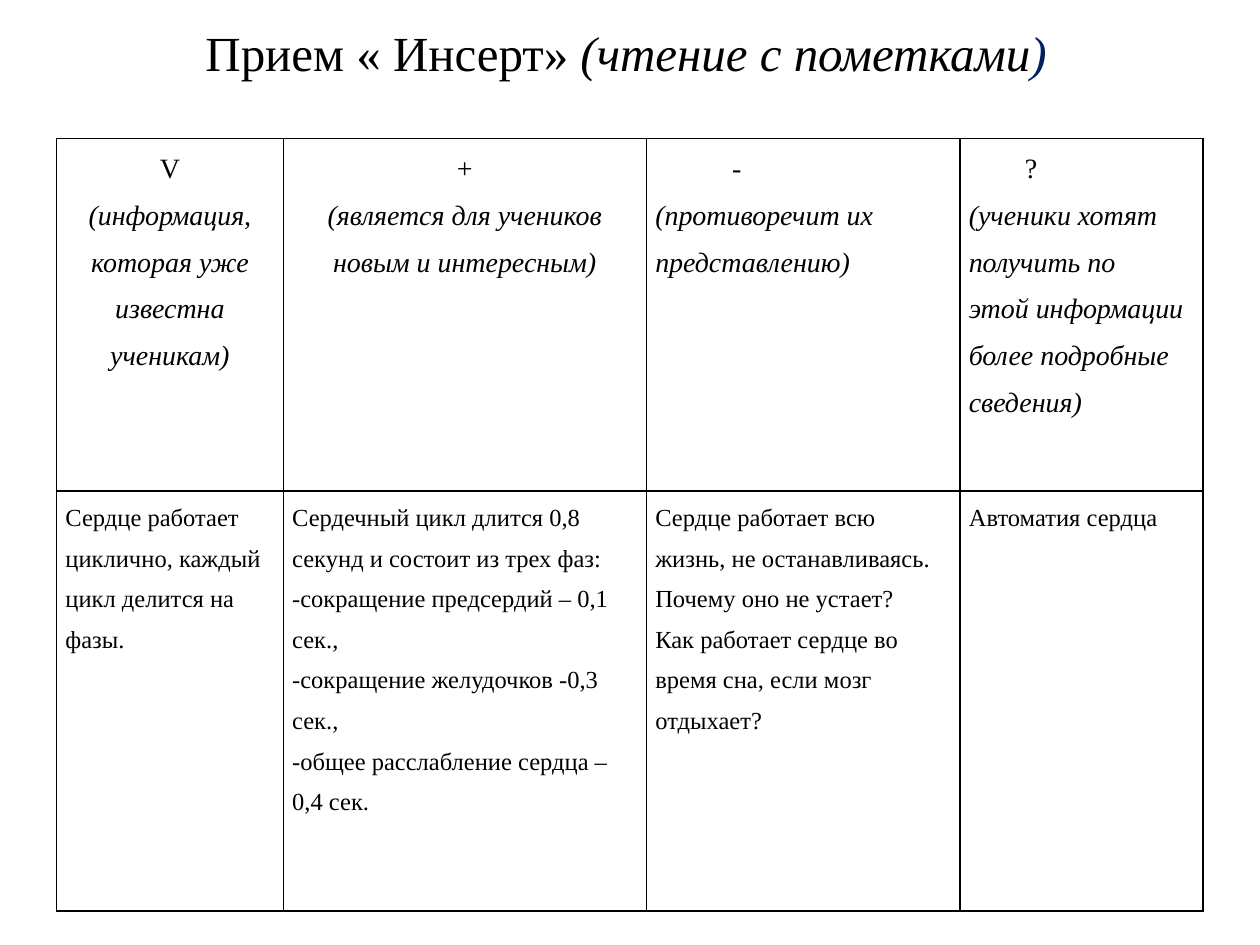
from lxml.etree import SubElement
from pptx import Presentation
from pptx.dml.color import RGBColor
from pptx.enum.text import MSO_ANCHOR, PP_ALIGN
from pptx.oxml.ns import qn
from pptx.util import Cm, Pt

COLORS = {"text": "000000", "accent": "002060", "border": "000000"}
FONT = "Times New Roman"
COLUMN_WIDTHS = [4.57, 7.32, 6.32, 4.9]
ROW_HEIGHTS = [7.11, 8.46]

HEADINGS = [
    ("V", "(информация, которая уже известна ученикам)", PP_ALIGN.CENTER, 0),
    ("+", "(является для учеников новым и интересным)", PP_ALIGN.CENTER, 0),
    ("-", "(противоречит их представлению)", PP_ALIGN.LEFT, 1.55),
    ("?", "(ученики хотят получить по\nэтой информации более подробные сведения)",
     PP_ALIGN.LEFT, 1.13),
]
NOTES = [
    ["Сердце работает циклично, каждый цикл делится на фазы."],
    ["Сердечный цикл длится 0,8 секунд и состоит из трех фаз:",
     "-сокращение предсердий – 0,1 сек.,",
     "-сокращение желудочков -0,3 сек.,",
     "-общее расслабление сердца – 0,4 сек."],
    ["Сердце работает всю жизнь, не останавливаясь. Почему оно не устает?",
     "Как работает сердце во время сна, если мозг отдыхает?"],
    ["Автоматия сердца"],
]


def add_span(para, text, size, italic=False, color="text"):
    for index, line in enumerate(text.split("\n")):
        if index:
            para.add_line_break()
        span = para.add_run()
        span.text = line
        span.font.name = FONT
        span.font.size = Pt(size)
        span.font.bold = False
        span.font.italic = italic
        span.font.color.rgb = RGBColor.from_string(COLORS[color])


def add_title(page, left, top, width, height):
    box = page.shapes.title
    box.left, box.top, box.width, box.height = Cm(left), Cm(top), Cm(width), Cm(height)
    frame = box.text_frame
    frame.word_wrap = True
    frame.vertical_anchor = MSO_ANCHOR.TOP
    para = frame.paragraphs[0]
    para.alignment = PP_ALIGN.CENTER
    add_span(para, "Прием « Инсерт» ", 28)
    add_span(para, "(чтение с пометками", 28, italic=True)
    add_span(para, ")", 28, italic=True, color="accent")


def format_cell(cell):
    cell.margin_left = cell.margin_right = Cm(0.18)
    cell.margin_top = cell.margin_bottom = 0
    properties = cell._tc.get_or_add_tcPr()
    for side in ("a:lnL", "a:lnR", "a:lnT", "a:lnB"):
        line = SubElement(properties, qn(side), w=str(Pt(1)))
        fill = SubElement(line, qn("a:solidFill"))
        SubElement(fill, qn("a:srgbClr"), val=COLORS["border"])
    cell.fill.background()


def fill_cell(cell, lines, size, alignment=PP_ALIGN.LEFT):
    format_cell(cell)
    frame = cell.text_frame
    for index, (text, italic, indent) in enumerate(lines):
        para = frame.add_paragraph() if index else frame.paragraphs[0]
        para.alignment = alignment
        para.line_spacing = 1.5
        if indent:
            para._p.get_or_add_pPr().set("marL", str(Cm(indent)))
        add_span(para, text, size, italic)


def add_insert_table(page, left, top):
    frame = page.shapes.add_table(
        len(ROW_HEIGHTS), len(COLUMN_WIDTHS), Cm(left), Cm(top),
        Cm(sum(COLUMN_WIDTHS)), Cm(sum(ROW_HEIGHTS)))
    table = frame.table
    table.first_row = table.horz_banding = False
    for column, width in zip(table.columns, COLUMN_WIDTHS):
        column.width = Cm(width)
    for row, height in zip(table.rows, ROW_HEIGHTS):
        row.height = Cm(height)
    for index, (mark, meaning, alignment, indent) in enumerate(HEADINGS):
        lines = [(mark, False, indent), (meaning, True, 0)]
        fill_cell(table.cell(0, index), lines, 16, alignment)
    for index, notes in enumerate(NOTES):
        fill_cell(table.cell(1, index), [(note, False, 0) for note in notes], 14)


def main():
    deck = Presentation()
    deck.slide_width, deck.slide_height = Cm(25.4), Cm(19.05)
    page = deck.slides.add_slide(deck.slide_layouts[5])
    add_title(page, 3.02, 0.33, 19.2, 1.68)
    add_insert_table(page, 1.14, 2.79)
    deck.save("out.pptx")


if __name__ == "__main__":
    main()
